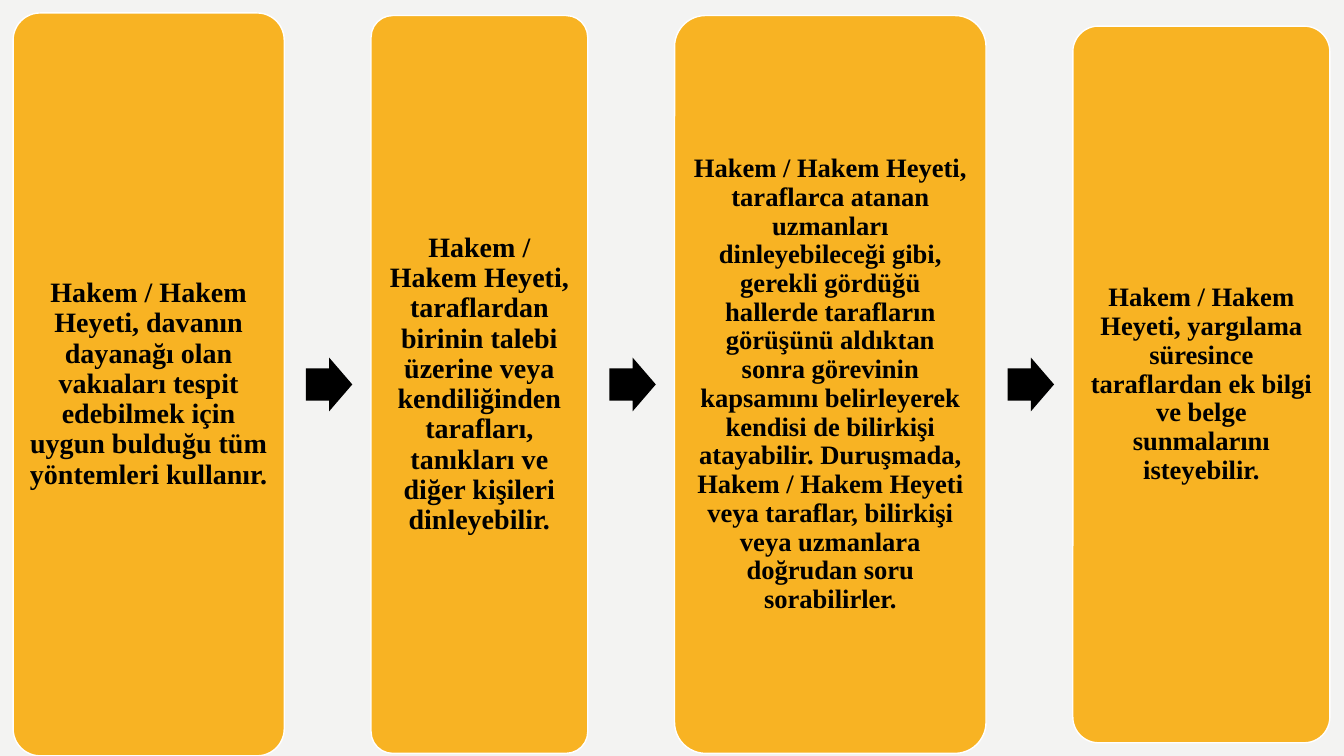
"""Build a one-slide process of four arbitration steps joined by block arrows."""
from dataclasses import dataclass

from pptx import Presentation
from pptx.dml.color import RGBColor
from pptx.enum.shapes import MSO_SHAPE
from pptx.enum.text import MSO_ANCHOR, PP_ALIGN
from pptx.shapes.autoshape import Shape
from pptx.slide import Slide
from pptx.util import Pt

CARD_SHAPE = MSO_SHAPE.ROUNDED_RECTANGLE
ARROW_SHAPE = MSO_SHAPE.RIGHT_ARROW
MIDDLE = MSO_ANCHOR.MIDDLE
CENTER = PP_ALIGN.CENTER

BACKGROUND = RGBColor(0xF3, 0xF3, 0xF2)
AMBER = RGBColor(0xF8, 0xB3, 0x23)
WHITE = RGBColor(0xFF, 0xFF, 0xFF)
BLACK = RGBColor(0x00, 0x00, 0x00)

FONT = "Times New Roman"
FIRST_LEFT = 9.36
CENTER_LINE = 274.6
STEP_GAP = 62
ARROW_OFFSET = 15.5
ARROW_WIDTH = 33.12
ARROW_HEIGHT = 38.4
CARD_INSET = 6


@dataclass(frozen=True)
class Step:
    width: float
    height: float
    font_size: float
    text: str


STEPS = (
    Step(193.68, 530.64, 20,
         "Hakem / Hakem Heyeti, davanın dayanağı olan vakıaları tespit "
         "edebilmek için uygun bulduğu tüm yöntemleri kullanır."),
    Step(154.8, 527.04, 20,
         "Hakem / Hakem Heyeti, taraflardan birinin talebi üzerine veya "
         "kendiliğinden tarafları, tanıkları ve diğer kişileri dinleyebilir."),
    Step(222.48, 527.04, 19,
         "Hakem / Hakem Heyeti, taraflarca atanan uzmanları dinleyebileceği "
         "gibi, gerekli gördüğü hallerde tarafların görüşünü aldıktan sonra "
         "görevinin kapsamını belirleyerek kendisi de bilirkişi atayabilir. "
         "Duruşmada, Hakem / Hakem Heyeti veya taraflar, bilirkişi veya "
         "uzmanlara doğrudan soru sorabilirler."),
    Step(183.6, 511.92, 19,
         "Hakem / Hakem Heyeti, yargılama süresince taraflardan ek bilgi ve "
         "belge sunmalarını isteyebilir."),
)


def add_centered_shape(slide: Slide, kind: MSO_SHAPE, left: float, width: float,
                       height: float, fill: RGBColor) -> Shape:
    """Add a filled shape centred on the slide's process line."""
    shape = slide.shapes.add_shape(
        kind, Pt(left), Pt(CENTER_LINE - height / 2), Pt(width), Pt(height))
    shape.shadow.inherit = False
    shape.fill.solid()
    shape.fill.fore_color.rgb = fill
    return shape


def add_card(slide: Slide, step: Step, left: float) -> None:
    """Add a rounded card holding the step's text."""
    card = add_centered_shape(slide, CARD_SHAPE, left, step.width, step.height, AMBER)
    card.adjustments[0] = 0.1
    card.line.color.rgb = WHITE
    card.line.width = Pt(1)
    frame = card.text_frame
    frame.word_wrap = True
    frame.vertical_anchor = MIDDLE
    frame.margin_left = frame.margin_right = Pt(CARD_INSET)
    frame.margin_top = frame.margin_bottom = Pt(CARD_INSET)
    paragraph = frame.paragraphs[0]
    paragraph.alignment = CENTER
    paragraph.line_spacing = 0.9
    run = paragraph.add_run()
    run.text = step.text
    run.font.name = FONT
    run.font.size = Pt(step.font_size)
    run.font.bold = True
    run.font.color.rgb = BLACK


def add_arrow(slide: Slide, left: float) -> None:
    """Add a black block arrow between two cards."""
    arrow = add_centered_shape(slide, ARROW_SHAPE, left, ARROW_WIDTH, ARROW_HEIGHT, BLACK)
    arrow.adjustments[0] = 0.6
    arrow.adjustments[1] = 0.5
    arrow.line.fill.background()


def main() -> None:
    """Lay the steps out from left to right and save the slide."""
    presentation = Presentation()
    presentation.slide_width = Pt(960)
    presentation.slide_height = Pt(540)
    slide = presentation.slides.add_slide(presentation.slide_layouts[6])
    slide.background.fill.solid()
    slide.background.fill.fore_color.rgb = BACKGROUND
    left = FIRST_LEFT
    for index, step in enumerate(STEPS):
        if index:
            add_arrow(slide, left - STEP_GAP + ARROW_OFFSET)
        add_card(slide, step, left)
        left += step.width + STEP_GAP
    presentation.save("out.pptx")


if __name__ == "__main__":
    main()
